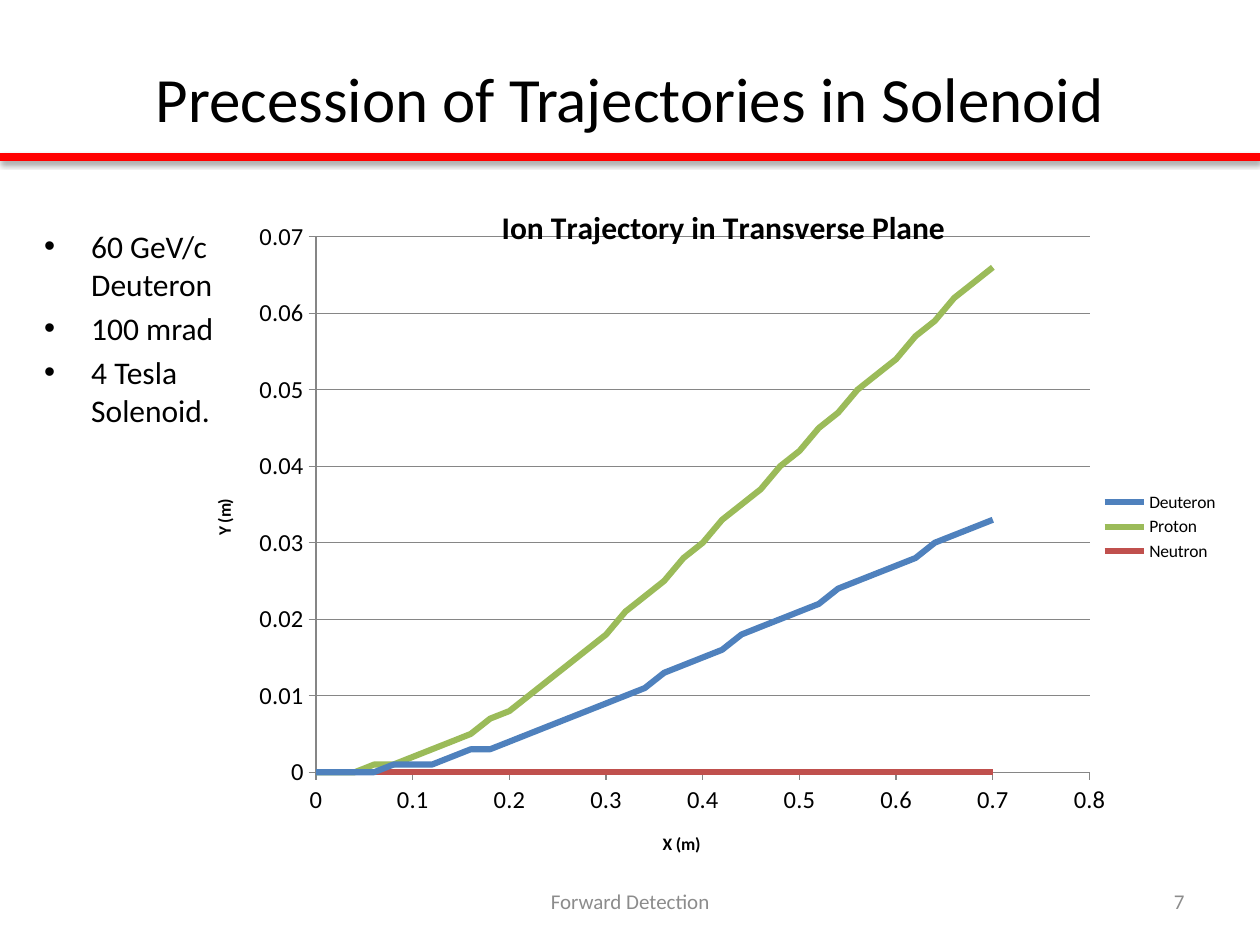
from lxml import etree
from pptx import Presentation
from pptx.chart.data import XyChartData
from pptx.dml.color import RGBColor
from pptx.enum.chart import XL_CHART_TYPE as CT, XL_LEGEND_POSITION as LP, XL_TICK_MARK as TM
from pptx.enum.shapes import MSO_CONNECTOR as CONN
from pptx.enum.text import MSO_ANCHOR as ANC, PP_ALIGN as AL
from pptx.oxml import parse_xml
from pptx.oxml.ns import nsdecls, qn
from pptx.util import Cm, Pt

# Content
FONT = "Calibri"
TITLE = "Precession of Trajectories in Solenoid"
POINTS = ["60 GeV/c Deuteron", "100 mrad", "4 Tesla Solenoid."]
FOOTER, NUMBER = "Forward Detection", "7"
CHART_TITLE = "Ion Trajectory in Transverse Plane"
X_TITLE, Y_TITLE = "X (m)", "Y (m)"
FIELD_END = 0.3  # curved up to here, straight beyond
XS = [round(i * 0.02, 2) for i in range(36)]
SERIES = [  # name, curvature in the field, colour
    ("Deuteron", 0.1006, "4F81BD"),
    ("Proton", 0.2013, "9BBB59"),
    ("Neutron", 0, "C0504D"),
]


def rgb(color):
    return RGBColor.from_string(color)


def trajectory(x, k):
    bent = min(x, FIELD_END)
    return round(k * bent * (2 * x - bent), 3)


def set_font(font, size, color="000000", bold=False):
    font.name, font.size, font.bold = FONT, Pt(size), bold
    font.color.rgb = rgb(color)


def add_text(s, box, lines, size=18, color="000000", align=AL.LEFT,
             anchor=ANC.MIDDLE, bullet=False):
    tf = s.shapes.add_textbox(*map(Cm, box)).text_frame
    tf.word_wrap, tf.vertical_anchor = True, anchor
    for i, line in enumerate(lines):
        p = tf.paragraphs[0] if i == 0 else tf.add_paragraph()
        p.alignment = align
        r = p.add_run()
        r.text = line
        set_font(r.font, size, color)
        if bullet:
            p.space_before = Pt(size * 0.2)
            pPr = p._p.get_or_add_pPr()
            pPr.set("marL", str(Cm(0.95)))
            pPr.set("indent", str(-Cm(0.95)))
            etree.SubElement(pPr, qn("a:buFont")).set("typeface", "Arial")
            etree.SubElement(pPr, qn("a:buChar")).set("char", "•")


def layout_xml(inner=False, **place):
    target = '<c:layoutTarget val="inner"/>' if inner else ""
    modes = "".join(f'<c:{k}Mode val="edge"/>' for k in place if k in "xy")
    values = "".join(f'<c:{k} val="{v}"/>' for k, v in place.items())
    return parse_xml(f'<c:layout {nsdecls("c")}><c:manualLayout>{target}{modes}{values}'
                     '</c:manualLayout></c:layout>')


def set_title(owner, text, size, x, y):
    owner.has_title = True
    title = getattr(owner, "chart_title", None) or owner.axis_title
    p = title.text_frame.paragraphs[0]
    r = p.add_run()
    r.text = text
    set_font(r.font, size, bold=True)
    el = title._element
    for old in el.findall(qn("c:layout")):
        el.remove(old)
    el.find(qn("c:tx")).addnext(layout_xml(x=x, y=y))
    return title


prs = Presentation()
prs.slide_width, prs.slide_height = Cm(25.4), Cm(19.05)
s = prs.slides.add_slide(prs.slide_layouts[6])

# Red rule with its shadow
rule = s.shapes.add_connector(CONN.STRAIGHT, 0, Cm(3.17), prs.slide_width, Cm(3.17))
rule.line.color.rgb, rule.line.width = rgb("FF0000"), Pt(4.5)
rule._element.spPr.append(parse_xml(
    f'<a:effectLst {nsdecls("a")}><a:outerShdw blurRad="{Pt(3.1)}" dist="{Pt(1.6)}" '
    'dir="5400000" rotWithShape="0"><a:srgbClr val="000000"><a:alpha val="38000"/>'
    '</a:srgbClr></a:outerShdw></a:effectLst>'))

# Title and bullets
add_text(s, (1.27, 0.76, 22.86, 2.41), [TITLE], size=36, align=AL.CENTER)
add_text(s, (0.64, 4.45, 4.24, 12.57), POINTS, anchor=ANC.TOP, bullet=True)

# Chart
data = XyChartData()
for name, k, _ in SERIES:
    series = data.add_series(name)
    for x in XS:
        series.add_data_point(x, trajectory(x, k))
chart = s.shapes.add_chart(CT.XY_SCATTER_SMOOTH_NO_MARKERS, Cm(4.23), Cm(3.61),
                           Cm(20.6), Cm(14.02), data).chart
set_font(chart.font, 10)
plot = chart.plots[0]
plot.vary_by_categories = False
for series, (_, _, color) in zip(plot.series, SERIES):
    series.smooth = True
    series.format.line.color.rgb = rgb(color)
    series.format.line.width = Pt(3.5)

set_title(chart, CHART_TITLE, 18, 0.28, 0.03).include_in_layout = True
x_axis, y_axis = chart.category_axis, chart.value_axis
for axis, text, top, step, x, y in [
        (x_axis, X_TITLE, 0.8, 0.1, 0.44, 0.935),
        (y_axis, Y_TITLE, 0.07, 0.01, 0, 0.455)]:
    set_title(axis, text, 10, x, y)
    axis.minimum_scale, axis.maximum_scale, axis.major_unit = 0, top, step
    axis.major_tick_mark, axis.minor_tick_mark = TM.OUTSIDE, TM.NONE
    axis.format.line.color.rgb = rgb("868686")
    axis.tick_labels.number_format = "General"
    axis.tick_labels.number_format_is_linked = False
    set_font(axis.tick_labels.font, 14)
x_axis.has_major_gridlines, y_axis.has_major_gridlines = False, True
y_axis.major_gridlines.format.line.color.rgb = rgb("868686")
body = y_axis.axis_title.text_frame._txBody.find(qn("a:bodyPr"))
body.set("rot", "-5400000")
body.set("vert", "horz")

area = plot._element.getparent()
for old in area.findall(qn("c:layout")):
    area.remove(old)
area.insert(0, layout_xml(inner=True, x=0.104, y=0.083, w=0.757, h=0.77))

chart.has_legend = True
chart.legend.position, chart.legend.include_in_layout = LP.RIGHT, False
set_font(chart.legend.font, 10)

# Footer
add_text(s, (18.21, 17.65, 5.92, 1.02), [NUMBER], size=12, color="8C8C8C", align=AL.RIGHT)
add_text(s, (8.68, 17.65, 8.05, 1.02), [FOOTER], size=12, color="8C8C8C", align=AL.CENTER)

prs.save("out.pptx")
